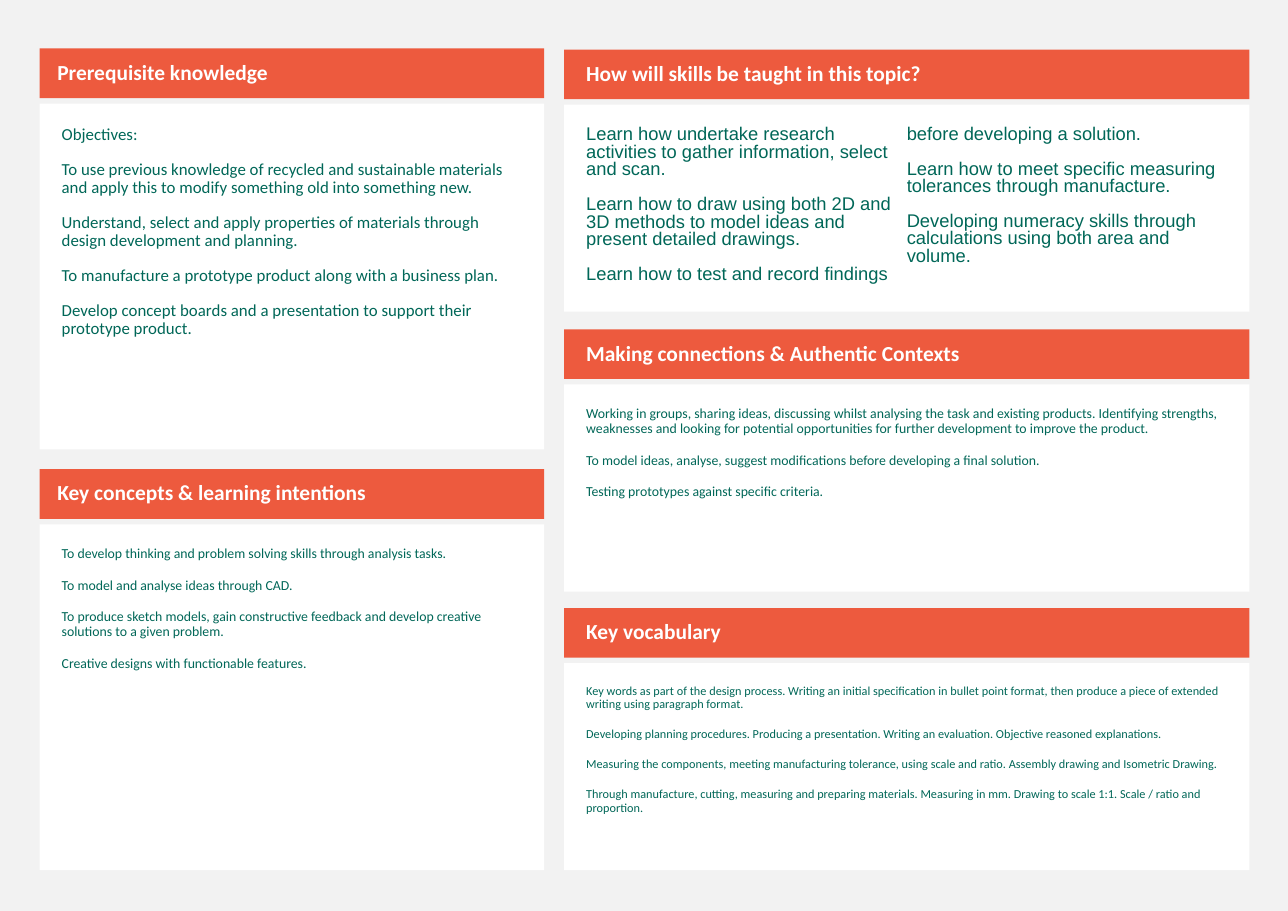
from copy import deepcopy
from dataclasses import dataclass

from pptx import Presentation
from pptx.dml.color import RGBColor as Color
from pptx.enum.text import MSO_ANCHOR as Anchor, MSO_AUTO_SIZE as AutoSize
from pptx.util import Inches, Pt


@dataclass(frozen=True)
class Theme:
    page: Color = Color.from_string("F2F2F2")
    band: Color = Color.from_string("ED5A3E")
    card: Color = Color.from_string("FFFFFF")
    ink: Color = Color.from_string("006758")
    font: str = "Calibri"
    skills_font: str = "Arial"
    heading: int = 14
    large: int = 12
    medium: int = 11
    small: int = 9
    tiny: int = 8
    gap: int = 11


@dataclass(frozen=True)
class Panel:
    box: tuple
    heading: str
    lines: list
    size: int
    heading_indent: float = 0.2
    font: str = Theme.font
    leading: float = 0.9
    columns: int = 1


THEME = Theme()
BAND_HEIGHT = 0.45
BODY_OFFSET = 0.5
LEFT, LEFT_WIDTH, LEFT_HEIGHT = 0.36, 4.58, 3.64
RIGHT, RIGHT_WIDTH, RIGHT_HEIGHT = 5.12, 6.22, 2.38

PANELS = [
    Panel(
        (LEFT, 0.44, LEFT_WIDTH, LEFT_HEIGHT),
        "Prerequisite knowledge",
        [
            "Objectives:",
            "To use previous knowledge of recycled and sustainable materials and apply this to modify something old into something new.",
            "Understand, select and apply properties of materials through design development and planning.",
            "To manufacture a prototype product along with a business plan.",
            "Develop concept boards and a presentation to support their prototype product.",
        ],
        THEME.medium,
        heading_indent=0.16,
    ),
    Panel(
        (LEFT, 4.26, LEFT_WIDTH, LEFT_HEIGHT),
        "Key concepts & learning intentions",
        [
            "To develop thinking and problem solving skills through analysis tasks.",
            "To model and analyse ideas through CAD.",
            "To produce sketch models, gain constructive feedback and develop creative solutions to a given problem.",
            "Creative designs with functionable features.",
        ],
        THEME.small,
        heading_indent=0.16,
    ),
    Panel(
        (RIGHT, 0.45, RIGHT_WIDTH, RIGHT_HEIGHT),
        "How will skills be taught in this topic?",
        [
            "Learn how undertake research activities to gather information, select and scan.",
            "Learn how to draw using both 2D and 3D methods to model ideas and present detailed drawings.",
            "Learn how to test and record findings before developing a solution.",
            "Learn how to meet specific measuring tolerances through manufacture.",
            "Developing numeracy skills through calculations using both area and volume.",
        ],
        THEME.large,
        font=THEME.skills_font,
        leading=0.8,
        columns=2,
    ),
    Panel(
        (RIGHT, 2.99, RIGHT_WIDTH, RIGHT_HEIGHT),
        "Making connections & Authentic Contexts",
        [
            "Working in groups, sharing ideas, discussing whilst analysing the task and existing products. Identifying strengths, weaknesses and looking for potential opportunities for further development to improve the product.",
            "To model ideas, analyse, suggest modifications before developing a final solution.",
            "Testing prototypes against specific criteria.",
        ],
        THEME.small,
    ),
    Panel(
        (RIGHT, 5.52, RIGHT_WIDTH, RIGHT_HEIGHT),
        "Key vocabulary",
        [
            "Key words as part of the design process. Writing an initial specification in bullet point format, then produce a piece of extended writing using paragraph format.",
            "Developing planning procedures. Producing a presentation. Writing an evaluation. Objective reasoned explanations.",
            "Measuring the components, meeting manufacturing tolerance, using scale and ratio. Assembly drawing and Isometric Drawing.",
            "Through manufacture, cutting, measuring and preparing materials. Measuring in mm. Drawing to scale 1:1. Scale / ratio and proportion.",
        ],
        THEME.tiny,
    ),
]


def apply(target, values):
    for name, value in values.items():
        setattr(target, name, value)


def prepare_layout(layout, count):
    pattern = deepcopy(layout.placeholders.get(idx=1).element)
    for holder in list(layout.placeholders):
        holder.element.getparent().remove(holder.element)
    for number in range(10, 10 + count):
        element = deepcopy(pattern)
        element.ph.idx = number
        element.nvSpPr.cNvPr.set("id", str(number))
        element.nvSpPr.cNvPr.set("name", f"Text Placeholder {number}")
        layout.shapes.element.append(element)


def fill_holder(holder, box, fill, lines, margins, anchor, leading, font):
    apply(holder, dict(zip(("left", "top", "width", "height"), map(Inches, box))))
    holder.fill.solid()
    holder.fill.fore_color.rgb = fill
    frame = holder.text_frame
    frame.text = "\n".join(lines)
    sides = ("margin_left", "margin_top", "margin_right", "margin_bottom")
    apply(frame, dict(zip(sides, map(Inches, margins))))
    apply(frame, {
        "word_wrap": True,
        "auto_size": AutoSize.NONE,
        "vertical_anchor": anchor,
    })
    color = font.pop("color")
    for para in frame.paragraphs:
        apply(para, {"line_spacing": leading, "space_before": Pt(THEME.gap)})
        for span in para.runs:
            apply(span.font, font)
            span.font.color.rgb = color


def draw_panel(panel, heading, body):
    left, top, width, height = panel.box
    fill_holder(
        heading, (left, top, width, BAND_HEIGHT), THEME.band, [panel.heading],
        (panel.heading_indent, 0.05, 0.1, 0.05), Anchor.MIDDLE, 0.9,
        {"name": THEME.font, "size": Pt(THEME.heading), "bold": True, "color": THEME.card},
    )
    fill_holder(
        body, (left, top + BODY_OFFSET, width, height - BODY_OFFSET), THEME.card,
        panel.lines, (0.2,) * 4, Anchor.TOP, panel.leading,
        {"name": panel.font, "size": Pt(panel.size), "bold": False, "color": THEME.ink},
    )
    if panel.columns > 1:
        body.element.txBody.bodyPr.set("numCol", str(panel.columns))


def main():
    deck = Presentation()
    apply(deck, {"slide_width": Inches(11.69), "slide_height": Inches(8.27)})
    layout = deck.slide_layouts.get_by_name("Comparison")
    prepare_layout(layout, 2 * len(PANELS))
    page = deck.slides.add_slide(layout)
    page.background.fill.solid()
    page.background.fill.fore_color.rgb = THEME.page
    holders = list(page.placeholders)
    for panel, heading, body in zip(PANELS, holders[::2], holders[1::2]):
        draw_panel(panel, heading, body)
    deck.save("out.pptx")


if __name__ == "__main__":
    main()
